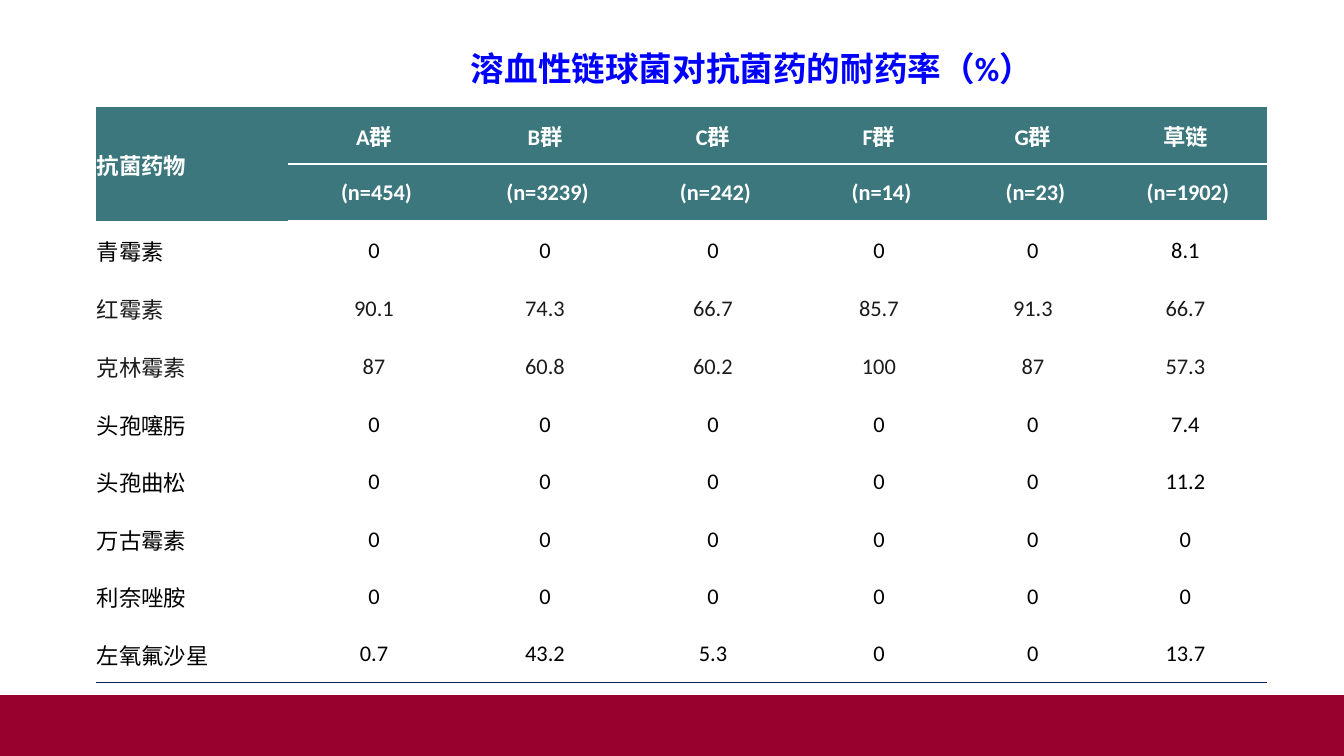
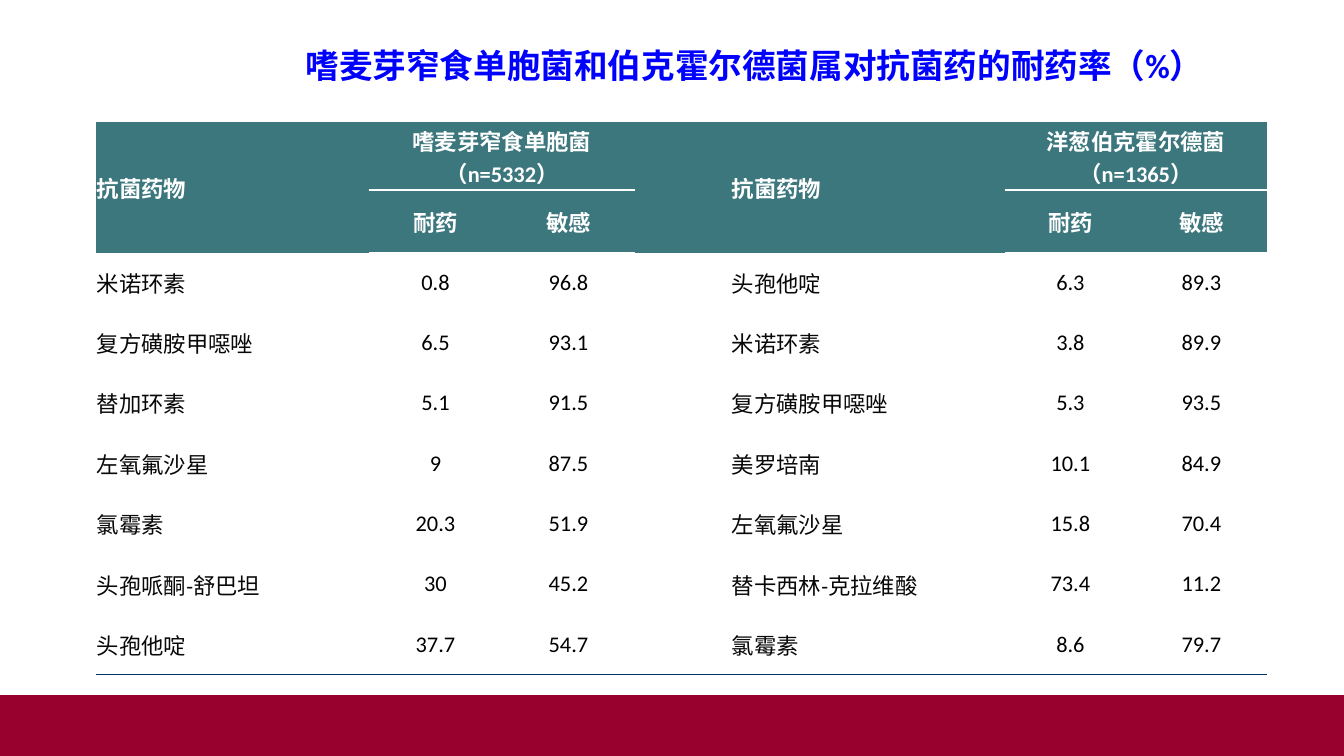
from lxml.etree import SubElement
from pptx import Presentation
from pptx.dml.color import RGBColor
from pptx.enum.lang import MSO_LANGUAGE_ID as Language
from pptx.enum.shapes import MSO_SHAPE as Shape
from pptx.enum.text import MSO_ANCHOR as Anchor, MSO_AUTO_SIZE as AutoSize, PP_ALIGN as Align
from pptx.oxml.ns import qn
from pptx.util import Emu, Pt

PLAIN_TABLE = "{2D5ABB26-0587-4C30-8999-92F81FD0307C}"

GROUP_HEADER = [
    ["抗菌药物", "A群", "B群", "C群", "F群", "G群", "草链"],
    ["", " (n=454)", " (n=3239)", " (n=242)", " (n=14)", " (n=23)", " (n=1902)"],
]
GROUP_RATES = [
    ["青霉素", "0", "0", "0", "0", "0", "8.1"],
    ["红霉素", "90.1", "74.3", "66.7", "85.7", "91.3", "66.7"],
    ["克林霉素", "87", "60.8", "60.2", "100", "87", "57.3"],
    ["头孢噻肟", "0", "0", "0", "0", "0", "7.4"],
    ["头孢曲松", "0", "0", "0", "0", "0", "11.2"],
    ["万古霉素", "0", "0", "0", "0", "0", "0"],
    ["利奈唑胺", "0", "0", "0", "0", "0", "0"],
    ["左氧氟沙星", "0.7", "43.2", "5.3", "0", "0", "13.7"],
]
SPECIES_HEADER = [
    ["抗菌药物", "嗜麦芽窄食单胞菌（n=5332）", "", "", "抗菌药物", "洋葱伯克霍尔德菌（n=1365）", ""],
    ["", "耐药", "敏感", "", "", "耐药", "敏感"],
]
SPECIES_RATES = [
    ["米诺环素", "0.8", "96.8", "", "头孢他啶", "6.3", "89.3"],
    ["复方磺胺甲噁唑", "6.5", "93.1", "", "米诺环素", "3.8", "89.9"],
    ["替加环素", "5.1", "91.5", "", "复方磺胺甲噁唑", "5.3", "93.5"],
    ["左氧氟沙星", "9", "87.5", "", "美罗培南", "10.1", "84.9"],
    ["氯霉素", "20.3", "51.9", "", "左氧氟沙星", "15.8", "70.4"],
    ["头孢哌酮-舒巴坦", "30", "45.2", "", "替卡西林-克拉维酸", "73.4", "11.2"],
    ["头孢他啶", "37.7", "54.7", "", "氯霉素", "8.6", "79.7"],
]


def px(length):
    return Emu(round(length * 914400 / 100.8))


def rgb(value):
    return RGBColor.from_string(value)


class Deck:
    FONT = "Calibri"
    WIDTH, HEIGHT = 1344, 756
    BAND_TOP = 695
    BAND, TITLE, HEADER, WHITE = "98002E", "0000FF", "3C777D", "FFFFFF"

    def __init__(self):
        self.show = Presentation()
        self.show.slide_width, self.show.slide_height = px(self.WIDTH), px(self.HEIGHT)
        self.layout = self.show.slide_layouts[5]
        self.slide = None

    def add_slide(self):
        self.slide = self.show.slides.add_slide(self.layout)

    def band(self):
        band = self.slide.shapes.add_shape(
            Shape.RECTANGLE, 0, px(self.BAND_TOP), px(self.WIDTH), px(self.HEIGHT - self.BAND_TOP))
        band.shadow.inherit = False
        band.fill.solid()
        band.fill.fore_color.rgb = rgb(self.BAND)
        band.line.fill.background()
        self.layout.element.cSld.spTree.append(band.element)

    def style(self, paragraph, size, color, bold, align):
        paragraph.alignment = align
        for run in paragraph.runs:
            font = run.font
            font.name, font.size, font.bold = self.FONT, Pt(size), bold
            font.color.rgb = rgb(color)
            font.language_id = Language.SIMPLIFIED_CHINESE

    def title(self, text, left, top, width, height):
        title = self.slide.shapes.title
        title.left, title.top, title.width, title.height = map(px, (left, top, width, height))
        frame = title.text_frame
        frame.text = text
        frame.word_wrap, frame.auto_size = True, AutoSize.NONE
        frame.vertical_anchor = Anchor.MIDDLE
        self.style(frame.paragraphs[0], 24, self.TITLE, True, Align.CENTER)

    def rule(self, cell, side, color):
        line = SubElement(cell._tc.get_or_add_tcPr(), qn(f"a:ln{side}"), w=str(Pt(1)))
        fill = SubElement(line, qn("a:solidFill"))
        SubElement(fill, qn("a:srgbClr"), val=color)

    def cell(self, cell, text, color, bold, align):
        cell.margin_left = cell.margin_right = cell.margin_top = px(1)
        cell.margin_bottom = 0
        cell.vertical_anchor = Anchor.MIDDLE
        cell.text_frame.text = text
        self.style(cell.text_frame.paragraphs[0], 16, color, bold, align)

    def table(self, left, top, widths, heights, header, rates, merges, name_columns, ink, end_color):
        content = header + rates
        frame = self.slide.shapes.add_table(
            len(heights), len(widths), px(left), px(top), px(sum(widths)), px(sum(heights)))
        frame.element.find(".//" + qn("a:tableStyleId")).text = PLAIN_TABLE
        table = frame.table
        table.first_row = table.horz_banding = False
        for column, width in zip(table.columns, widths):
            column.width = px(width)
        for row, height in zip(table.rows, heights):
            row.height = px(height)
        for r, texts in enumerate(content):
            in_header = r < len(header)
            for c, text in enumerate(texts):
                cell = table.cell(r, c)
                if in_header and header[1][c]:
                    self.rule(cell, "BT"[r], self.WHITE)
                elif r == len(content) - 1:
                    self.rule(cell, "B", end_color)
                if in_header:
                    cell.fill.solid()
                    cell.fill.fore_color.rgb = rgb(self.HEADER)
                else:
                    cell.fill.background()
                if text:
                    align = Align.LEFT if c in name_columns else Align.CENTER
                    color = self.WHITE if in_header else ink(r, c)
                    self.cell(cell, text, color, in_header, align)
        for first, last in merges:
            table.cell(*first).merge(table.cell(*last))


def main():
    deck = Deck()

    deck.add_slide()
    deck.band()
    deck.title("溶血性链球菌对抗菌药的耐药率（%）", 335, 37, 834, 62)
    deck.table(
        96, 107, [192, 172, 170, 166, 166, 142, 163], [57, 57, 58, 59] + [57, 58] * 3,
        GROUP_HEADER, GROUP_RATES, [((0, 0), (1, 0))], (0,),
        lambda row, column: "1C1C1C" if row in (3, 4) else "000000", "002060")

    deck.add_slide()
    deck.title("嗜麦芽窄食单胞菌和伯克霍尔德菌属对抗菌药的耐药率（%）", 236, 44, 1037, 43)
    deck.table(
        96, 122, [273, 133, 133, 96, 274, 131, 131], [68, 63, 59] + [60, 61] * 3,
        SPECIES_HEADER, SPECIES_RATES,
        [((0, 0), (1, 0)), ((0, 1), (0, 2)), ((0, 4), (1, 4)), ((0, 5), (0, 6))], (0, 4),
        lambda row, column: "080808" if column in (0, 4) else "000000", "003366")

    deck.show.save("out.pptx")


if __name__ == "__main__":
    main()
